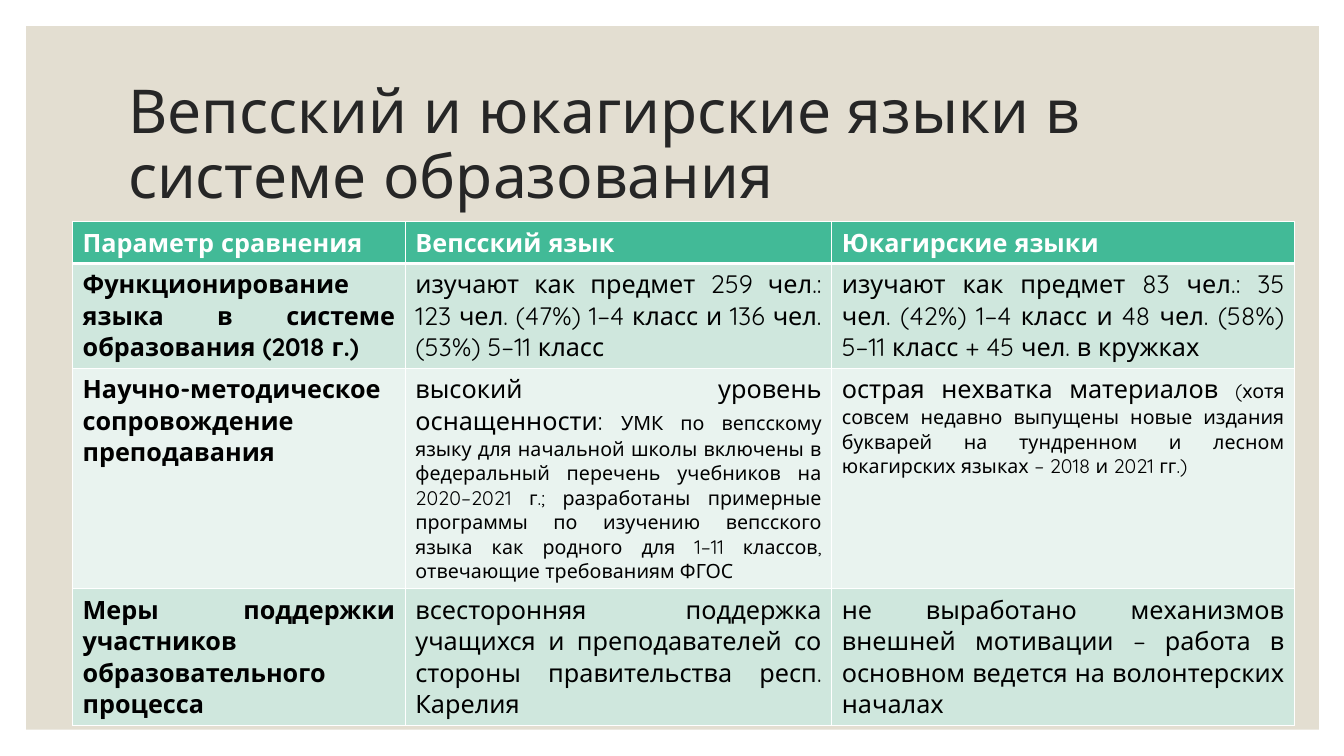
from lxml import etree
from pptx import Presentation
from pptx.dml.color import RGBColor
from pptx.enum import shapes, text
from pptx.oxml import ns
from pptx.util import Inches, Pt

FONT = "Quicksand"
COLORS = {
    "panel": "E3DED1", "title": "262626", "header": "42BA97",
    "odd": "CFE7DD", "even": "E9F3EF", "white": "FFFFFF", "black": "000000",
}
COLUMN_WIDTHS = [3.3, 4.23, 4.59]
ROW_HEIGHTS = [0.41, 1.03, 2.18, 1.34]
# Each cell is a list of parts: the first is set at 18 pt, the second at 14 pt.
ROWS = [
    [["Параметр сравнения"], ["Вепсский язык"], ["Юкагирские языки"]],
    [["Функционирование языка в системе образования (2018 г.)"],
     ["изучают как предмет 259 чел.: 123 чел. (47%) 1–4 класс и 136 чел. (53%) 5–11 класс"],
     ["изучают как предмет 83 чел.: 35 чел. (42%) 1–4 класс и 48 чел. (58%) "
      "5–11 класс + 45 чел. в кружках"]],
    [["Научно-методическое сопровождение преподавания"],
     ["высокий уровень оснащенности: ",
      "УМК по вепсскому языку для начальной школы включены в федеральный перечень "
      "учебников на 2020–2021 г.; разработаны примерные программы по изучению вепсского "
      "языка как родного для 1–11 классов, отвечающие требованиям ФГОС"],
     ["острая нехватка материалов ",
      "(хотя совсем недавно выпущены новые издания букварей на тундренном и лесном "
      "юкагирских языках – 2018 и 2021 гг.)"]],
    [["Меры поддержки участников образовательного процесса"],
     ["всесторонняя поддержка учащихся и преподавателей со стороны правительства респ. Карелия"],
     ["не выработано механизмов внешней мотивации – работа в основном ведется на "
      "волонтерских началах"]],
]


def format_font(font, color, **values):
    font.color.rgb = RGBColor.from_string(COLORS[color])
    for name, value in {"name": FONT, **values}.items():
        setattr(font, name, value)


def add_borders(cell, widths):
    """Give the cell white borders; widths maps a side (L, R, T, B) to points."""
    properties = cell._tc.get_or_add_tcPr()
    for side, width in widths.items():
        line = etree.SubElement(properties, ns.qn(f"a:ln{side}"), w=str(Pt(width)))
        fill = etree.SubElement(line, ns.qn("a:solidFill"))
        etree.SubElement(fill, ns.qn("a:srgbClr"), val=COLORS["white"])


presentation = Presentation()
presentation.slide_width = Inches(13.33)
presentation.slide_height = Inches(7.5)
slide = presentation.slides.add_slide(presentation.slide_layouts[5])

panel = slide.shapes.add_shape(
    shapes.MSO_SHAPE.RECTANGLE, Inches(0.26), Inches(0.26), Inches(12.82), Inches(6.98))
panel.shadow.inherit = False
panel.fill.solid()
panel.fill.fore_color.rgb = RGBColor.from_string(COLORS["panel"])
panel.line.fill.background()
slide.shapes._spTree.insert(2, panel._element)  # behind the title

title = slide.shapes.title
title.left, title.top, title.width, title.height = map(Inches, (1.17, 0.7, 11, 1.5))
title.text_frame.text = "Вепсский и юкагирские языки в системе образования"
title.text_frame.word_wrap = True
title.text_frame.auto_size = text.MSO_AUTO_SIZE.NONE
title.text_frame.vertical_anchor = text.MSO_ANCHOR.MIDDLE
paragraph = title.text_frame.paragraphs[0]
paragraph.alignment = text.PP_ALIGN.LEFT
paragraph.line_spacing = 0.9
format_font(paragraph.runs[0].font, "title", size=Pt(43.2))

table = slide.shapes.add_table(
    len(ROWS), len(COLUMN_WIDTHS), Inches(0.72), Inches(2.2),
    Inches(sum(COLUMN_WIDTHS)), Inches(sum(ROW_HEIGHTS))).table
for column, width in zip(table.columns, COLUMN_WIDTHS):
    column.width = Inches(width)
for row, height in zip(table.rows, ROW_HEIGHTS):
    row.height = Inches(height)

for row_index, row in enumerate(ROWS):
    is_header = row_index == 0
    fill_color = "header" if is_header else "odd" if row_index % 2 else "even"
    for column_index, parts in enumerate(row):
        cell = table.cell(row_index, column_index)
        add_borders(cell, {"L": 1, "R": 1, "T": 3 if row_index == 1 else 1,
                           "B": 3 if is_header else 1})
        cell.fill.solid()
        cell.fill.fore_color.rgb = RGBColor.from_string(COLORS[fill_color])
        paragraph = cell.text_frame.paragraphs[0]
        paragraph.alignment = text.PP_ALIGN.JUSTIFY
        for part, size in zip(parts, (18, 14)):
            run = paragraph.add_run()
            run.text = part
            format_font(run.font, "white" if is_header else "black",
                        size=Pt(size), bold=is_header or column_index == 0)

presentation.save("out.pptx")
